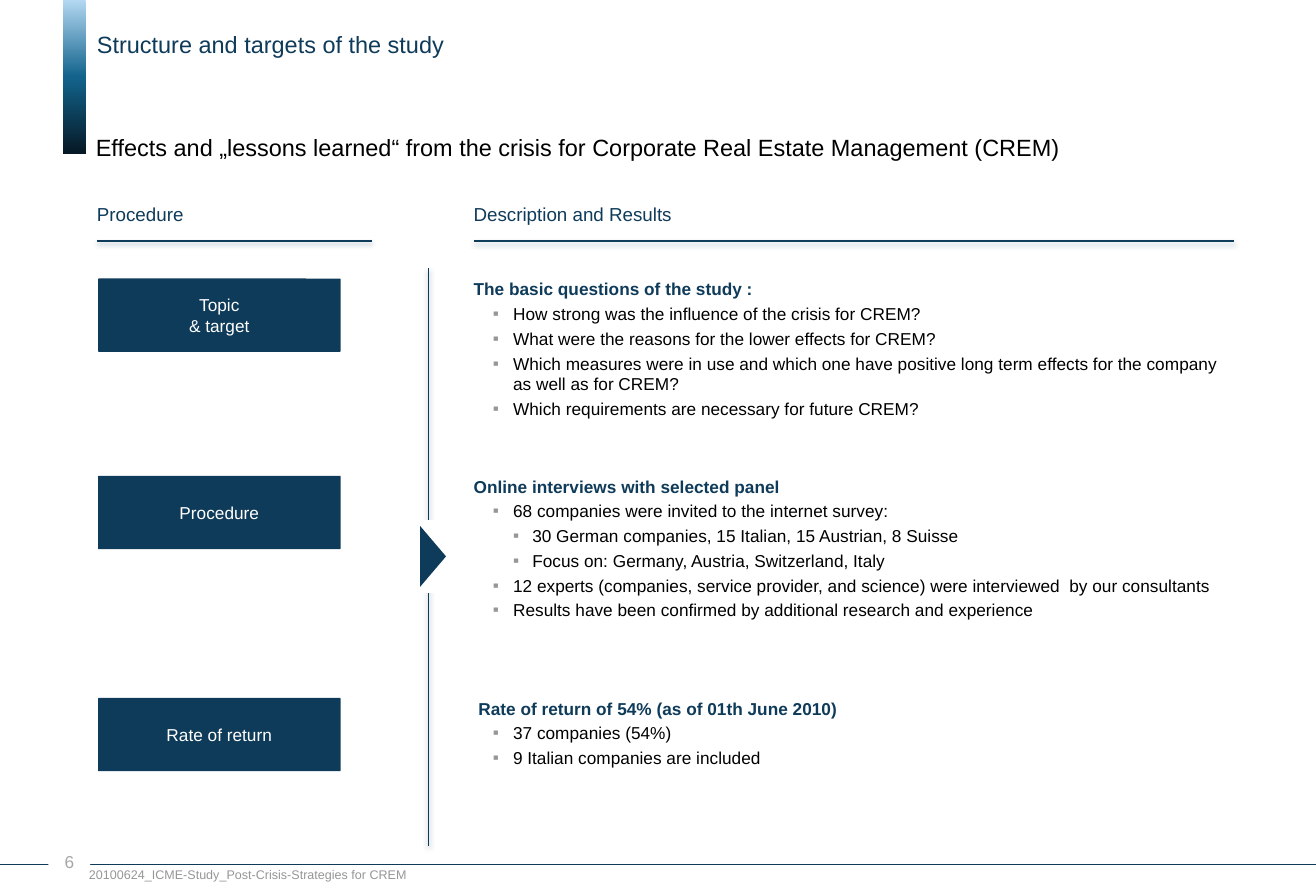
from lxml import etree
from pptx import Presentation
from pptx.dml.color import RGBColor
from pptx.enum.shapes import MSO_CONNECTOR, MSO_SHAPE
from pptx.enum.text import MSO_ANCHOR, MSO_AUTO_SIZE, PP_ALIGN
from pptx.oxml import parse_xml
from pptx.oxml.ns import nsdecls, qn
from pptx.util import Inches, Pt

COLORS = {"navy": "0F3B5A", "black": "000000", "white": "FFFFFF", "bullet": "969696",
          "number": "A6A6A6", "sky": "B3D8F2", "ocean": "12638C", "night": "061824"}
WIDTH, HEIGHT = 11.67, 7.92
LEFT_COLUMN, RIGHT_COLUMN = 0.86, 4.2
RULE_TOP = 2.14
INDENTS = {1: (0.35, -0.18), 2: (0.52, -0.17)}

SECTIONS = [
    (2.47, 6.72, 1.38, ["Topic", "& target"], "The basic questions of the study :", [
        (1, "How strong was the influence of the crisis for CREM?"),
        (1, "What were the reasons for the lower effects for CREM?"),
        (1, "Which measures were in use and which one have positive long term effects "
            "for the company as well as for CREM?"),
        (1, "Which requirements are necessary for future CREM?")]),
    (4.22, 6.72, 1.64, ["Procedure"], "Online interviews with selected panel", [
        (1, "68 companies were invited to the internet survey:"),
        (2, "30 German companies, 15 Italian, 15 Austrian, 8 Suisse"),
        (2, "Focus on: Germany, Austria, Switzerland, Italy"),
        (1, "12 experts (companies, service provider, and science) were interviewed  "
            "by our consultants"),
        (1, "Results have been confirmed by additional research and experience")]),
    (6.19, 6.56, 0.75, ["Rate of return"], " Rate of return of 54% (as of 01th June 2010)", [
        (1, "37 companies (54%)"),
        (1, "9 Italian companies are included")]),
]


def color(name):
    """Return the named palette colour."""
    return RGBColor.from_string(COLORS[name])


def set_frame(frame, margins=(0, 0, 0, 0), anchor=MSO_ANCHOR.TOP, wrap=True):
    """Set insets (left, top, right, bottom), anchor and wrapping of a text frame."""
    frame.margin_left, frame.margin_top, frame.margin_right, frame.margin_bottom = map(
        Inches, margins)
    frame.vertical_anchor = anchor
    frame.word_wrap = wrap
    frame.auto_size = MSO_AUTO_SIZE.NONE


def style(paragraph, size, name, bold=False, align=PP_ALIGN.LEFT):
    """Set the font and alignment of a paragraph."""
    paragraph.alignment = align
    font = paragraph.font
    font.name, font.size, font.bold = "Arial", Pt(size), bold
    font.color.rgb = color(name)


def add_block(slide, box, fill, preset=MSO_SHAPE.RECTANGLE):
    """Add a flat filled shape without outline."""
    block = slide.shapes.add_shape(preset, *map(Inches, box))
    block.shadow.inherit = False
    block.fill.solid()
    block.fill.fore_color.rgb = color(fill)
    block.line.fill.background()
    return block


def add_label(slide, box, text, size, name, margins=(0, 0, 0, 0), wrap=True):
    """Add a one-line text box."""
    frame = slide.shapes.add_textbox(*map(Inches, box)).text_frame
    set_frame(frame, margins, wrap=wrap)
    frame.text = text
    style(frame.paragraphs[0], size, name)


def add_rule(slide, start, end, width=1, shadow=True):
    """Add a navy line, with a soft shadow below it if wanted."""
    rule = slide.shapes.add_connector(MSO_CONNECTOR.STRAIGHT, *map(Inches, start + end))
    rule.line.color.rgb = color("navy")
    rule.line.width = Pt(width)
    effects = etree.SubElement(rule._element.spPr, qn("a:effectLst"))
    if shadow:
        effects.append(parse_xml(
            f'<a:outerShdw {nsdecls("a")} blurRad="{Pt(3.1)}" dist="{Pt(1.6)}" dir="5400000" '
            f'rotWithShape="0"><a:srgbClr val="{COLORS["navy"]}"><a:alpha val="38000"/>'
            '</a:srgbClr></a:outerShdw>'))


def add_bullet(paragraph, level):
    """Give a paragraph a grey square bullet and the indent of its level."""
    paragraph.level = level
    properties = paragraph._p.get_or_add_pPr()
    margin, indent = INDENTS[level]
    properties.set("marL", str(Inches(margin)))
    properties.set("indent", str(Inches(indent)))
    bullet_color = etree.SubElement(properties, qn("a:buClr"))
    etree.SubElement(bullet_color, qn("a:srgbClr"), val=COLORS["bullet"])
    etree.SubElement(properties, qn("a:buFont"), typeface="Arial")
    etree.SubElement(properties, qn("a:buChar"), char="▪")


def add_header(slide):
    """Place the gradient bar, topic line and title."""
    bar = add_block(slide, (0.56, 0, 0.2, 1.37), "ocean")
    stops = "".join(f'<a:gs pos="{position}"><a:srgbClr val="{COLORS[name]}"/></a:gs>'
                    for position, name in ((0, "sky"), (50000, "ocean"), (100000, "night")))
    properties = bar._element.spPr
    properties.replace(properties.find(qn("a:solidFill")), parse_xml(
        f'<a:gradFill {nsdecls("a")} rotWithShape="1"><a:gsLst>{stops}</a:gsLst>'
        '<a:lin ang="5400000" scaled="0"/></a:gradFill>'))
    add_label(slide, (LEFT_COLUMN, 0.27, 9.24, 0.25),
              "Structure and targets of the study", 15, "navy")
    title = slide.shapes.title
    title.left, title.top, title.width, title.height = map(Inches, (0.85, 0.55, 10.12, 0.88))
    set_frame(title.text_frame, anchor=MSO_ANCHOR.BOTTOM)
    title.text = "Effects and „lessons learned“ from the crisis for Corporate Real Estate Management (CREM)"
    heading = title.text_frame.paragraphs[0]
    heading.line_spacing = 0.9
    style(heading, 15, "black")


def add_column_head(slide, left, width, text):
    """Place a column heading above its rule."""
    add_label(slide, (left, RULE_TOP - 0.34, width, 0.2), text, 12, "navy")
    add_rule(slide, (left, RULE_TOP), (left + width, RULE_TOP))


def add_section(slide, top, width, height, step, heading, points):
    """Place a step box and the description beside it."""
    step_box = add_block(slide, (LEFT_COLUMN + 0.01, top, 2.15, 0.65), "navy",
                         MSO_SHAPE.ROUNDED_RECTANGLE)
    step_box.adjustments[0] = 0.01
    set_frame(step_box.text_frame, anchor=MSO_ANCHOR.MIDDLE, wrap=False)
    step_box.text_frame.text = "\n".join(step)
    for line in step_box.text_frame.paragraphs:
        style(line, 11, "white", align=PP_ALIGN.CENTER)

    description = add_block(slide, (RIGHT_COLUMN, top, width, height), "white").text_frame
    set_frame(description, (0, 0, 0, 0.12))
    description.text = heading
    style(description.paragraphs[0], 11, "navy", bold=True)
    for level, text in points:
        point = description.add_paragraph()
        point.text = text
        point.space_before = Pt(2.6)
        add_bullet(point, level)
        style(point, 11, "black")


def add_divider(slide, left, top, bottom):
    """Place the vertical divider with an arrowhead in its middle."""
    middle = (top + bottom) / 2
    add_rule(slide, (left, top), (left, bottom))
    gap = add_block(slide, (left - 0.23, middle - 0.31, 0.39, 0.62), "white")
    gap.line.color.rgb = color("white")
    gap.line.width = Pt(2)
    arrow = add_block(slide, (left - 0.23, middle - 0.12, 0.54, 0.23), "navy",
                      MSO_SHAPE.ISOSCELES_TRIANGLE)
    arrow.rotation = 90


def add_footer(slide, top):
    """Place the footer rule, page number and file name."""
    add_rule(slide, (0, top), (WIDTH, top), width=0.75, shadow=False)
    number = add_block(slide, (0.43, top - 0.17, 0.37, 0.27), "white").text_frame
    set_frame(number, (0.02, 0.05, 0.02, 0.05))
    number.text = "6"
    style(number.paragraphs[0], 11, "number", align=PP_ALIGN.CENTER)
    add_label(slide, (0.69, top - 0.03, 3.09, 0.24),
              "20100624_ICME-Study_Post-Crisis-Strategies for CREM", 8, "bullet",
              (0.1, 0.05, 0.1, 0.05), wrap=False)


def main():
    """Build and save the study structure slide."""
    deck = Presentation()
    deck.slide_width, deck.slide_height = Inches(WIDTH), Inches(HEIGHT)
    slide = deck.slides.add_slide(deck.slide_layouts[5])
    add_header(slide)
    add_column_head(slide, LEFT_COLUMN, 2.44, "Procedure")
    add_column_head(slide, RIGHT_COLUMN, 6.74, "Description and Results")
    for section in SECTIONS:
        add_section(slide, *section)
    add_divider(slide, 3.8, 2.38, 7.5)
    add_footer(slide, 7.67)
    deck.save("out.pptx")


if __name__ == "__main__":
    main()
